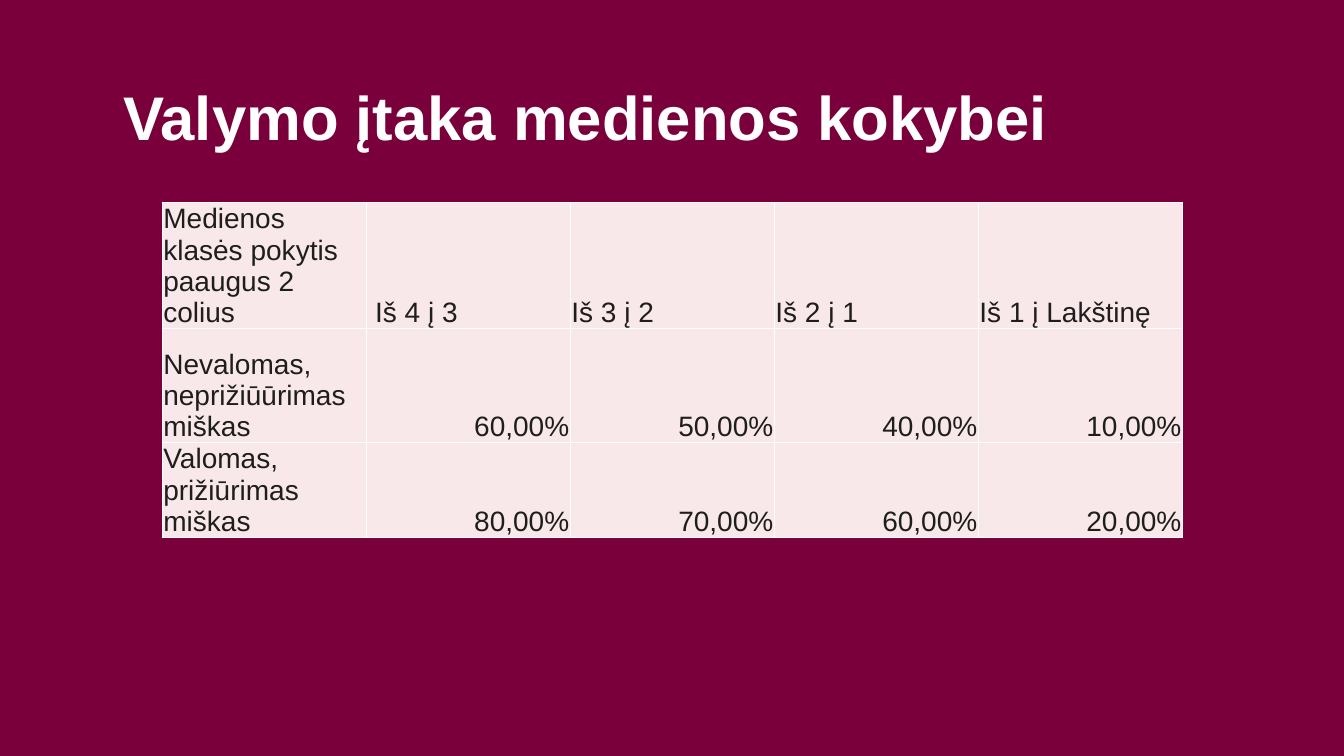
from dataclasses import dataclass

from lxml.etree import SubElement
from pptx import Presentation
from pptx.dml.color import RGBColor
from pptx.enum.text import MSO_ANCHOR, PP_ALIGN
from pptx.oxml.ns import qn
from pptx.util import Inches, Pt


@dataclass(frozen=True)
class Theme:
    background: RGBColor = RGBColor.from_string("7A003B")
    heading: RGBColor = RGBColor.from_string("FFFFFF")
    ink: RGBColor = RGBColor.from_string("1E1E1D")
    cell: RGBColor = RGBColor.from_string("F9E8EA")
    border: RGBColor = RGBColor.from_string("FFFFFF")
    font: str = "Arial"
    heading_size: Pt = Pt(44)
    cell_size: Pt = Pt(20)
    border_width: Pt = Pt(1)


def style_font(font, size, color, bold=False):
    font.name = theme.font
    font.size = size
    font.bold = bold
    font.color.rgb = color


def add_borders(cell):
    properties = cell._tc.get_or_add_tcPr()
    for position, side in enumerate(("a:lnL", "a:lnR", "a:lnT", "a:lnB")):
        line = SubElement(properties, qn(side), w=str(theme.border_width))
        fill = SubElement(line, qn("a:solidFill"))
        SubElement(fill, qn("a:srgbClr"), val=str(theme.border))
        properties.insert(position, line)


theme = Theme()
presentation = Presentation()
presentation.slide_width = Inches(13.33)
presentation.slide_height = Inches(7.5)
slide = presentation.slides.add_slide(presentation.slide_layouts[5])
slide.background.fill.solid()
slide.background.fill.fore_color.rgb = theme.background

heading = slide.shapes.title
heading.left, heading.top = Inches(1.12), Inches(0.82)
heading.width, heading.height = Inches(9.9), Inches(1.23)
heading.text_frame.text = "Valymo įtaka medienos kokybei"
heading.text_frame.vertical_anchor = MSO_ANCHOR.TOP
heading_line = heading.text_frame.paragraphs[0]
heading_line.alignment = PP_ALIGN.LEFT
heading_line.line_spacing = 0.9
style_font(heading_line.font, theme.heading_size, theme.heading, bold=True)

quality_rows = [
    ["Medienos klasės pokytis paaugus 2 colius", " Iš 4 į 3", "Iš 3 į 2", "Iš 2 į 1", "Iš 1 į Lakštinę"],
    ["Nevalomas, neprižiūūrimas miškas", "60,00%", "50,00%", "40,00%", "10,00%"],
    ["Valomas, prižiūrimas miškas", "80,00%", "70,00%", "60,00%", "20,00%"],
]
row_heights = [1.13, 1.13, 0.68]

quality = slide.shapes.add_table(
    len(quality_rows), len(quality_rows[0]),
    Inches(1.61), Inches(2.01), Inches(10.12), Inches(sum(row_heights)),
).table
quality.first_row = False
quality.horz_banding = False

for row_index, (texts, height) in enumerate(zip(quality_rows, row_heights)):
    quality.rows[row_index].height = Inches(height)
    for column_index, text in enumerate(texts):
        cell = quality.cell(row_index, column_index)
        cell.text = text
        cell.vertical_anchor = MSO_ANCHOR.BOTTOM
        cell.margin_left = cell.margin_right = cell.margin_top = Inches(0.01)
        cell.margin_bottom = 0
        cell.fill.solid()
        cell.fill.fore_color.rgb = theme.cell
        add_borders(cell)
        paragraph = cell.text_frame.paragraphs[0]
        is_value = row_index > 0 and column_index > 0
        paragraph.alignment = PP_ALIGN.RIGHT if is_value else PP_ALIGN.LEFT
        style_font(paragraph.font, theme.cell_size, theme.ink)

presentation.save("out.pptx")
